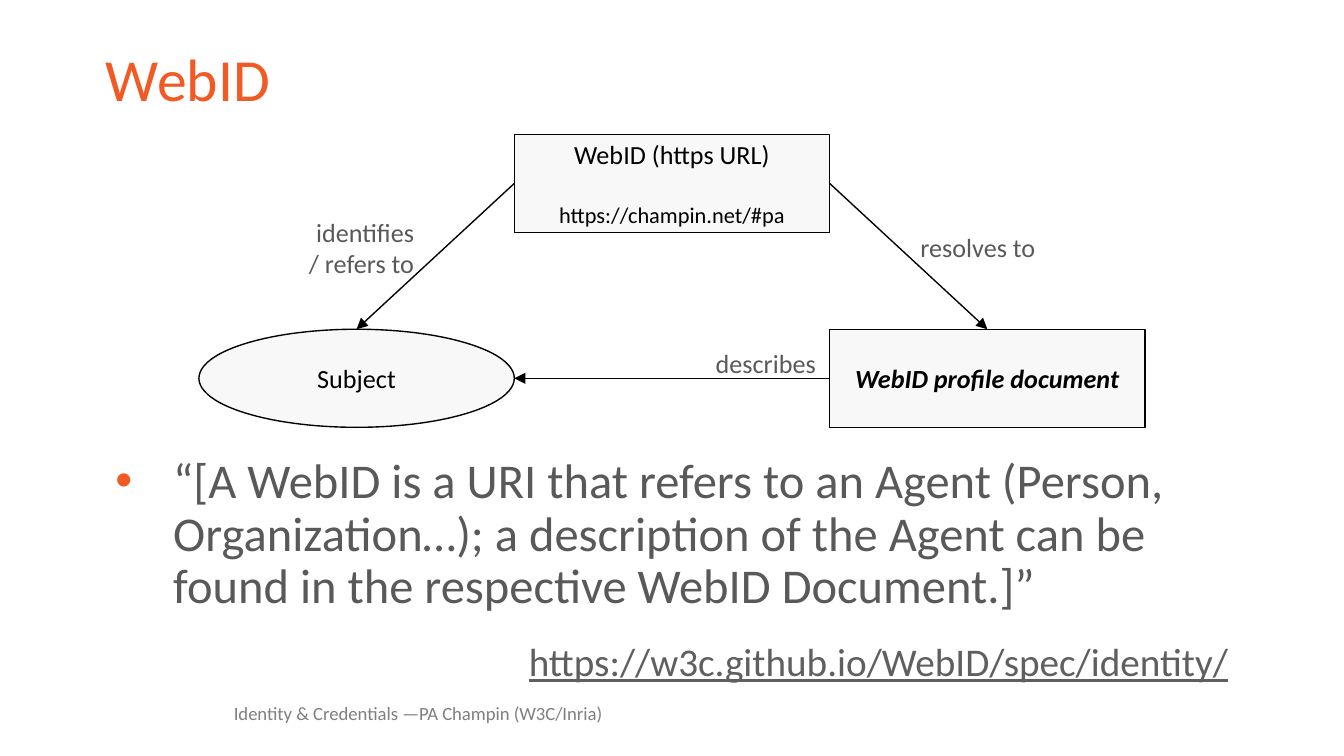
from lxml.etree import SubElement
from pptx import Presentation
from pptx.dml.color import RGBColor
from pptx.enum.shapes import MSO_CONNECTOR, MSO_SHAPE
from pptx.enum.text import MSO_ANCHOR, PP_ALIGN
from pptx.oxml.ns import qn
from pptx.util import Inches, Pt

FONT = "Calibri"
ORANGE, GREY, BLACK, PALE = "F15A24", "595959", "000000", "F8F8F8"
LEFT, CENTER, RIGHT = PP_ALIGN.LEFT, PP_ALIGN.CENTER, PP_ALIGN.RIGHT
TOP, MIDDLE, BOTTOM = MSO_ANCHOR.TOP, MSO_ANCHOR.MIDDLE, MSO_ANCHOR.BOTTOM

TITLE = "WebID"
QUOTE = ("“[A WebID is a URI that refers to an Agent (Person, Organization…); "
         "a description of the Agent can be found in the respective WebID Document.]”")
SOURCE = "https://w3c.github.io/WebID/spec/identity/"
FOOTER = "Identity & Credentials —PA Champin (W3C/Inria)"

# Nodes: name, shape, column, row, lines of (text, size, emphasis)
NODES = [
    ("webid", MSO_SHAPE.RECTANGLE, 1, 0,
     [("WebID (https URL)", 14, False), ("https://champin.net/#pa", 12, False)]),
    ("profile", MSO_SHAPE.RECTANGLE, 2, 1, [("WebID profile document", 14, True)]),
    ("subject", MSO_SHAPE.OVAL, 0, 1, [("Subject", 14, False)]),
]
# Arrows: start node and side, end node and side
ARROWS = [
    ("webid", "left", "subject", "top"),
    ("webid", "right", "profile", "top"),
    ("profile", "left", "subject", "right"),
]
# Labels: lines, left, top, width, alignment
LABELS = [
    (["identifies", "/ refers to"], 2.13, 1.62, 1.05, RIGHT),
    (["resolves to"], 6.75, 1.62, 1.19, LEFT),
    (["describes"], 5.12, 2.48, 1.05, RIGHT),
]
WIDTH = 10
HEIGHT = WIDTH * 9 / 16
GRID_X, GRID_Y, NODE_H, ROW = 1.48, 1, 0.73, 1.45
NODE_W = (WIDTH - 2 * GRID_X) / 3
MARGIN = 0.69
BODY_W = WIDTH - 2 * MARGIN
SIDES = {"left": (0, 0.5), "right": (1, 0.5), "top": (0.5, 0)}


def color(value):
    return RGBColor.from_string(value)


def setup(frame, anchor, inset):
    frame.word_wrap = True
    frame.vertical_anchor = anchor
    frame.margin_left = frame.margin_right = Inches(inset[0])
    frame.margin_top = frame.margin_bottom = Inches(inset[1])


def write(para, text, size, tint, align=LEFT, spacing=None):
    para.alignment = align
    if spacing:
        para.line_spacing = spacing
    run = para.add_run()
    run.text = text
    run.font.name, run.font.size = FONT, Pt(size)
    run.font.color.rgb = color(tint)
    return run


def add_box(box, anchor=MIDDLE, inset=(0.1, 0.05)):
    frame = slide.shapes.add_textbox(*map(Inches, box)).text_frame
    setup(frame, anchor, inset)
    return frame


def add_lines(frame, count):
    return [frame.paragraphs[0]] + [frame.add_paragraph() for _ in range(count - 1)]


def add_node(kind, col, row, lines):
    """Draw a node and return its left and top."""
    x, y = GRID_X + col * NODE_W, GRID_Y + row * ROW
    node = slide.shapes.add_shape(kind, *map(Inches, (x, y, NODE_W, NODE_H)))
    node.shadow.inherit = False
    node.fill.solid()
    node.fill.fore_color.rgb = color(PALE)
    node.line.color.rgb = color(BLACK)
    node.line.width = Pt(0.75)
    setup(node.text_frame, MIDDLE, (0.1, 0.1))
    paras = add_lines(node.text_frame, len(lines))
    for para, (text, size, strong) in zip(paras, lines):
        run = write(para, text, size, BLACK, CENTER)
        run.font.bold = run.font.italic = strong
    for para in paras[1:]:
        para.space_before = Pt(17)
    return x, y


def add_arrow(start, end):
    line = slide.shapes.add_connector(MSO_CONNECTOR.STRAIGHT, *map(Inches, start + end))
    line.line.color.rgb = color(BLACK)
    line.line.width = Pt(0.75)
    SubElement(line.line._get_or_add_ln(), qn("a:tailEnd"), type="triangle")
    SubElement(line._element.spPr, qn("a:effectLst"))


def add_bullet(para, indent, hang):
    props = para._p.get_or_add_pPr()
    props.set("marL", str(Inches(indent)))
    props.set("indent", str(Inches(-hang)))
    tint = SubElement(props, qn("a:buClr"))
    SubElement(tint, qn("a:srgbClr"), val=ORANGE)
    SubElement(props, qn("a:buFont"), typeface="Arial")
    SubElement(props, qn("a:buChar"), char="•")


deck = Presentation()
deck.slide_width, deck.slide_height = Inches(WIDTH), Inches(HEIGHT)
slide = deck.slides.add_slide(deck.slide_layouts[6])

title = add_box((MARGIN, 0.3, BODY_W, 0.63))
write(title.paragraphs[0], TITLE, 32, ORANGE, spacing=0.9)

footer = add_box((1.74, 5.21, 3.03, 0.18), BOTTOM, (0, 0))
write(footer.paragraphs[0], FOOTER, 10, "7F7F7F", spacing=0.9)

spots = {name: add_node(*rest) for name, *rest in NODES}


def port(name, side):
    """Point on a node where an arrow meets the given side."""
    (x, y), (dx, dy) = spots[name], SIDES[side]
    return x + dx * NODE_W, y + dy * NODE_H


for tail, out, head, into in ARROWS:
    add_arrow(port(tail, out), port(head, into))

for lines, x, y, width, align in LABELS:
    frame = add_box((x, y, width, 0.44), inset=(0.1, 0.1))
    for para, text in zip(add_lines(frame, len(lines)), lines):
        write(para, text, 14, GREY, align)

quote = add_box((MARGIN, 3.35, BODY_W, 1.3), TOP).paragraphs[0]
add_bullet(quote, 0.5, 0.43)
write(quote, QUOTE, 26, GREY, spacing=0.9)

source = add_box((MARGIN, 4.66, BODY_W, 0.48), BOTTOM)
source.margin_right = Inches(0.17)
link = write(source.paragraphs[0], SOURCE, 21, "5F5F5F", RIGHT, 0.8)
link.font.underline = True

deck.save("out.pptx")
